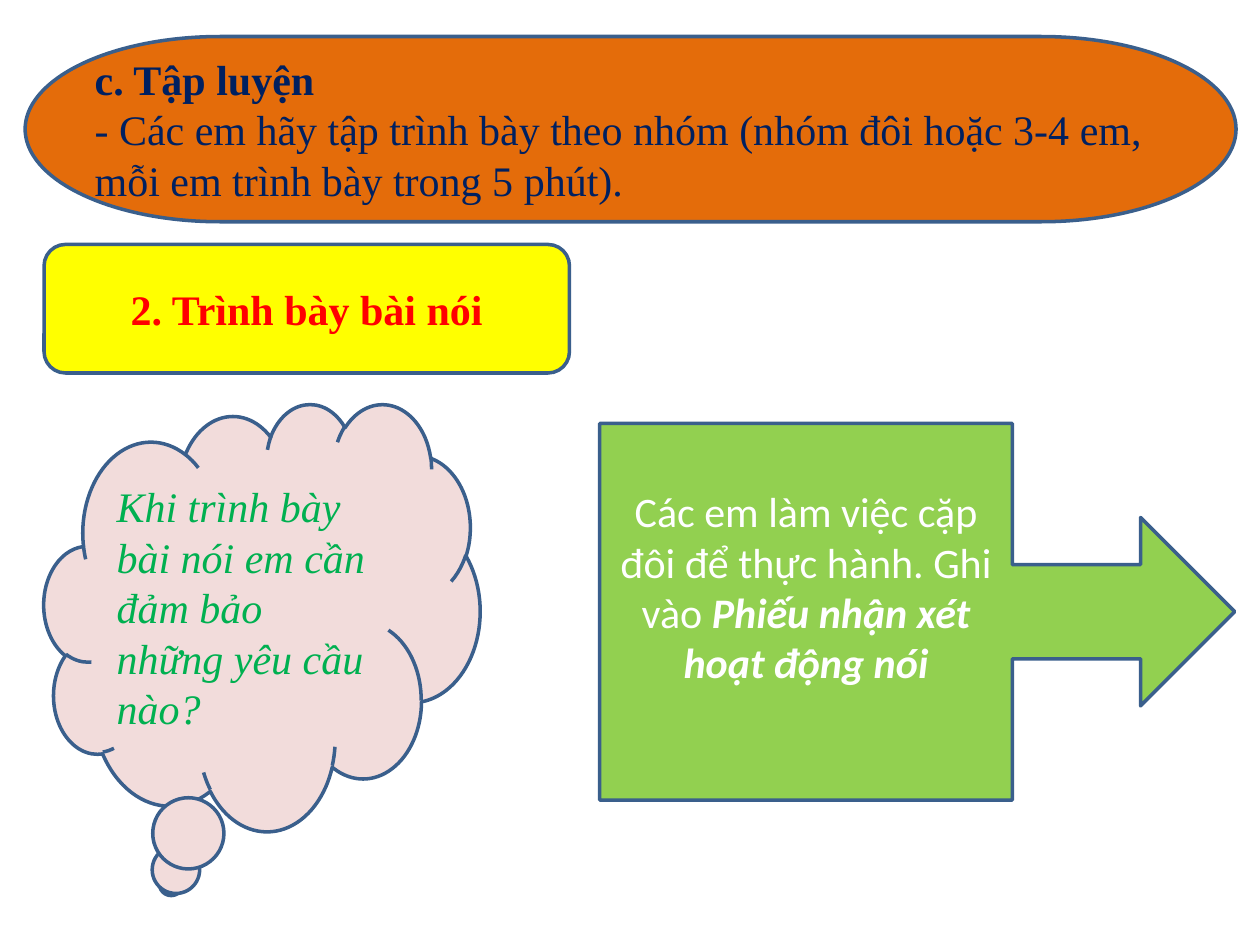
"""Build a lesson slide on practising and presenting a talk."""
from pptx import Presentation
from pptx.dml.color import RGBColor
from pptx.enum.shapes import MSO_SHAPE
from pptx.enum.text import MSO_ANCHOR, PP_ALIGN
from pptx.util import Inches, Pt

TERMINATOR = MSO_SHAPE.FLOWCHART_TERMINATOR
ROUNDED = MSO_SHAPE.ROUNDED_RECTANGLE
CLOUD = MSO_SHAPE.CLOUD_CALLOUT
ARROW = MSO_SHAPE.RIGHT_ARROW_CALLOUT
MIDDLE = MSO_ANCHOR.MIDDLE
LEFT = PP_ALIGN.LEFT
CENTER = PP_ALIGN.CENTER

OUTLINE = RGBColor(0x3A, 0x5F, 0x8C)
ORANGE = RGBColor(0xE4, 0x6C, 0x0A)
NAVY = RGBColor(0x00, 0x20, 0x60)
YELLOW = RGBColor(0xFF, 0xFF, 0x00)
RED = RGBColor(0xFF, 0x00, 0x00)
PINK = RGBColor(0xF2, 0xDC, 0xDB)
GREEN = RGBColor(0x00, 0xB0, 0x50)
LIME = RGBColor(0x92, 0xD0, 0x50)
WHITE = RGBColor(0xFF, 0xFF, 0xFF)

SERIF = "Times New Roman"
SANS = "Calibri"
COLUMNS, ROWS = 100, 75
CELL = Inches(0.1)


def add_panel(page, box, kind, fill):
    """Add an outlined shape in a box of grid columns and rows; return its text frame."""
    shape = page.shapes.add_shape(kind, *(round(part * CELL) for part in box))
    shape.shadow.inherit = False
    shape.fill.solid()
    shape.fill.fore_color.rgb = fill
    shape.line.color.rgb = OUTLINE
    shape.line.width = Pt(2)
    frame = shape.text_frame
    frame.word_wrap = True
    frame.vertical_anchor = MIDDLE
    return frame


def add_text(para, text, color, font=SERIF, bold=False, italic=False, align=LEFT):
    """Append one formatted span to a paragraph."""
    para.alignment = align
    span = para.add_run()
    span.text = text
    span.font.size = Pt(24)
    span.font.name = font
    span.font.color.rgb = color
    span.font.bold = bold
    span.font.italic = italic


def add_practice_banner(page, box):
    """Place the practice heading and its instruction."""
    frame = add_panel(page, box, TERMINATOR, ORANGE)
    add_text(frame.paragraphs[0], "c. Tập luyện", NAVY, bold=True)
    add_text(
        frame.add_paragraph(),
        "- Các em hãy tập trình bày theo nhóm (nhóm đôi hoặc 3-4 em, "
        "mỗi em trình bày trong 5 phút).",
        NAVY,
    )


def add_section_label(page, box):
    """Place the label of the presenting section."""
    frame = add_panel(page, box, ROUNDED, YELLOW)
    add_text(frame.paragraphs[0], "2. Trình bày bài nói", RED, bold=True, align=CENTER)


def add_question_cloud(page, box):
    """Place the question for the class."""
    frame = add_panel(page, box, CLOUD, PINK)
    add_text(
        frame.paragraphs[0],
        "Khi trình bày bài nói em cần đảm bảo những yêu cầu nào?",
        GREEN,
        italic=True,
    )


def add_task_arrow(page, box):
    """Place the pair task, raised above the middle of its panel."""
    frame = add_panel(page, box, ARROW, LIME)
    frame.margin_bottom = Inches(0.45)
    para = frame.paragraphs[0]
    add_text(
        para,
        "Các em làm việc cặp đôi để thực hành. Ghi vào ",
        WHITE,
        font=SANS,
        align=CENTER,
    )
    add_text(
        para,
        "Phiếu nhận xét hoạt động nói",
        WHITE,
        font=SANS,
        bold=True,
        italic=True,
        align=CENTER,
    )


def main():
    """Build and save the deck."""
    deck = Presentation()
    deck.slide_width = COLUMNS * CELL
    deck.slide_height = ROWS * CELL
    page = deck.slides.add_slide(deck.slide_layouts.get_by_name("Blank"))
    add_practice_banner(page, (2, 2.9, 96.1, 14.7))
    add_section_label(page, (3.5, 19.4, 41.7, 10.2))
    add_question_cloud(page, (3.5, 32, 34.6, 33.9))
    add_task_arrow(page, (47.6, 33.6, 50.4, 29.9))
    deck.save("out.pptx")


if __name__ == "__main__":
    main()
